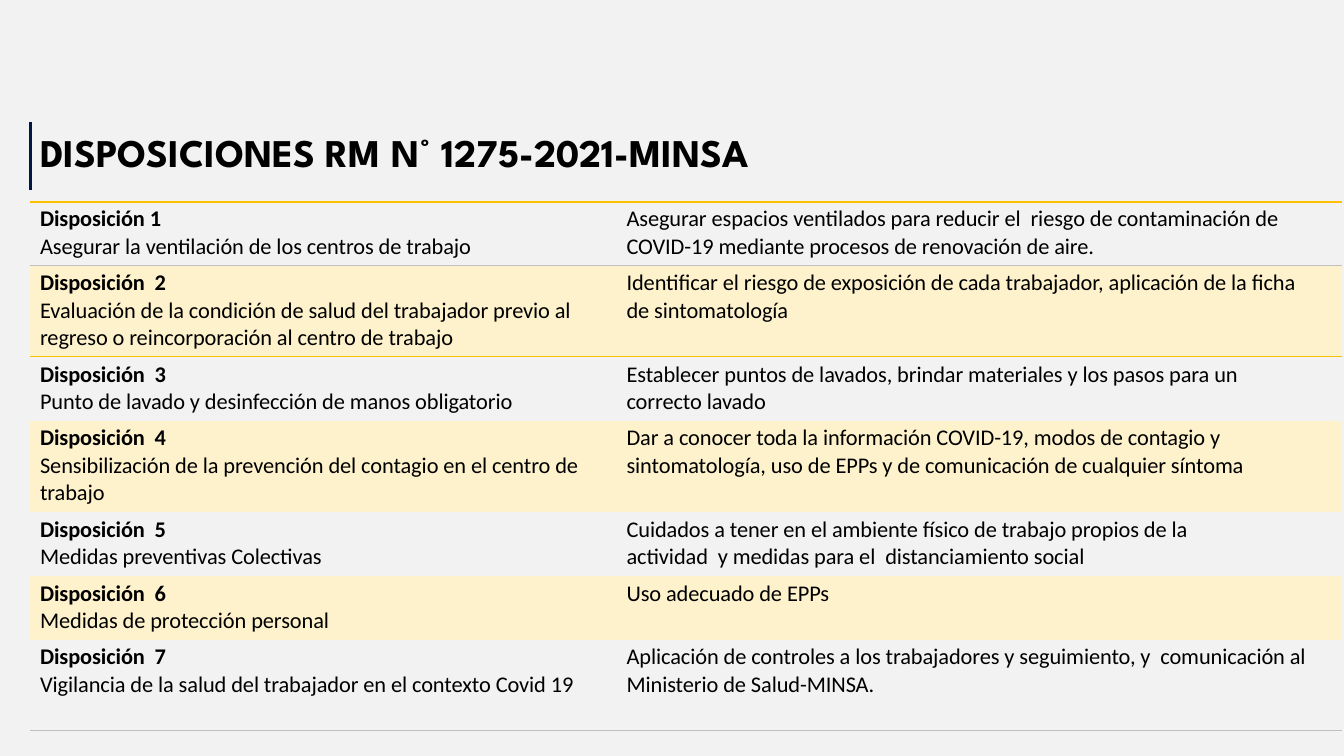
from dataclasses import dataclass

from lxml.etree import SubElement
from pptx import Presentation
from pptx.dml.color import RGBColor
from pptx.enum.shapes import MSO_CONNECTOR
from pptx.enum.text import MSO_ANCHOR, MSO_AUTO_SIZE, PP_ALIGN
from pptx.oxml.ns import qn
from pptx.util import Cm, Pt


@dataclass(frozen=True)
class Theme:
    title_font: str = "League Spartan"
    body_font: str = "Calibri"
    title_size: int = 28
    body_size: int = 16
    text: str = "000000"
    background: str = "F2F2F2"
    band: str = "FEF2CC"
    accent: str = "FFC000"
    rule: str = "BFBFBF"
    navy: str = "011643"


THEME = Theme()
TITLE = "DISPOSICIONES RM N° 1275-2021-MINSA"
COLUMN_WIDTHS = (14.5, 18.57)
TWO_LINES, THREE_LINES = 1.61, 2.3
NARROW = 2.0  # right margin of the cells with shorter lines

# heading, measure, detail paragraphs, row height, right margin of the detail
PROVISIONS = [
    ("Disposición 1", "Asegurar la ventilación de los centros de trabajo",
     ["Asegurar espacios ventilados para reducir el  riesgo de contaminación de "
      "COVID-19 mediante procesos de renovación de aire."], TWO_LINES, 0),
    ("Disposición  2", "Evaluación de la condición de salud del trabajador previo al "
     "regreso o reincorporación al centro de trabajo",
     ["Identificar el riesgo de exposición de cada trabajador, aplicación de la ficha",
      "de sintomatología"], THREE_LINES, 0),
    ("Disposición  3", "Punto de lavado y desinfección de manos obligatorio",
     ["Establecer puntos de lavados, brindar materiales y los pasos para un "
      "correcto lavado"], TWO_LINES, NARROW),
    ("Disposición  4", "Sensibilización de la prevención del contagio en el centro de trabajo",
     ["Dar a conocer toda la información COVID-19, modos de contagio y",
      "sintomatología, uso de EPPs y de comunicación de cualquier síntoma"], THREE_LINES, 0),
    ("Disposición  5", "Medidas preventivas Colectivas",
     ["Cuidados a tener en el ambiente físico de trabajo propios de la "
      "actividad  y medidas para el  distanciamiento social"], TWO_LINES, NARROW),
    ("Disposición  6", "Medidas de protección personal",
     ["Uso adecuado de EPPs"], TWO_LINES, 0),
    ("Disposición  7", "Vigilancia de la salud del trabajador en el contexto Covid 19",
     ["Aplicación de controles a los trabajadores y seguimiento, y  comunicación al "
      "Ministerio de Salud-MINSA."], THREE_LINES, 0),
]

# row: (edge, colour, width in points)
BORDERS = {
    0: [("T", THEME.accent, 1.5), ("B", THEME.rule, 0.75)],
    1: [("T", THEME.rule, 0.75), ("B", THEME.accent, 1)],
    2: [("T", THEME.accent, 1)],
    6: [("B", THEME.rule, 0.75)],
}


class SlideBuilder:
    def __init__(self, slide, theme):
        self.slide, self.theme = slide, theme
        fill = slide.background.fill
        fill.solid()
        fill.fore_color.rgb = RGBColor.from_string(theme.background)

    def add_run(self, paragraph, text, font_name, size, bold=False, spacing=0):
        """Add a run; spacing is in hundredths of a point."""
        run = paragraph.add_run()
        run.text = text
        font = run.font
        font.name, font.size, font.bold = font_name, Pt(size), bold
        font.color.rgb = RGBColor.from_string(self.theme.text)
        if spacing:
            font._element.set("spc", str(spacing))

    def set_title(self, text, left, top, width, height):
        title = self.slide.shapes.title
        title.left, title.top, title.width, title.height = map(Cm, (left, top, width, height))
        frame = title.text_frame
        frame.margin_left = frame.margin_right = frame.margin_bottom = 0
        frame.margin_top = Cm(0.04)
        frame.vertical_anchor = MSO_ANCHOR.MIDDLE
        frame.auto_size = MSO_AUTO_SIZE.SHAPE_TO_FIT_TEXT
        paragraph = frame.paragraphs[0]
        paragraph.alignment = PP_ALIGN.LEFT
        self.add_run(paragraph, text, self.theme.title_font, self.theme.title_size, True)

    def add_line(self, x1, y1, x2, y2, color, width):
        line = self.slide.shapes.add_connector(
            MSO_CONNECTOR.STRAIGHT, Cm(x1), Cm(y1), Cm(x2), Cm(y2))
        line.line.color.rgb = RGBColor.from_string(color)
        line.line.width = Pt(width)
        SubElement(line._element.spPr, qn("a:effectLst"))

    def set_borders(self, cell, borders):
        """Draw the listed edges and switch off the others."""
        styles = {edge: (color, width) for edge, color, width in borders}
        properties = cell._tc.get_or_add_tcPr()
        for position, edge in enumerate("LRTB"):
            line = properties.makeelement(qn(f"a:ln{edge}"))
            properties.insert(position, line)
            if edge not in styles:
                SubElement(line, qn("a:noFill"))
                continue
            color, width = styles[edge]
            line.set("w", str(Pt(width)))
            SubElement(SubElement(line, qn("a:solidFill")), qn("a:srgbClr"), val=color)

    def fill_cell(self, cell, paragraphs, left, right, banded, borders):
        """Write (text, bold) paragraphs and format the cell."""
        cell.margin_left, cell.margin_right = Cm(left), Cm(right)
        cell.margin_top, cell.margin_bottom = Cm(0.1), 0
        if banded:
            cell.fill.solid()
            cell.fill.fore_color.rgb = RGBColor.from_string(self.theme.band)
        else:
            cell.fill.background()
        self.set_borders(cell, borders)
        frame = cell.text_frame
        for index, (text, bold) in enumerate(paragraphs):
            paragraph = frame.add_paragraph() if index else frame.paragraphs[0]
            self.add_run(paragraph, text, self.theme.body_font, self.theme.body_size, bold, -5)

    def add_provisions(self, provisions, left, top):
        heights = [provision[3] for provision in provisions]
        table = self.slide.shapes.add_table(
            len(provisions), len(COLUMN_WIDTHS), Cm(left), Cm(top),
            Cm(sum(COLUMN_WIDTHS)), Cm(sum(heights))).table
        table.first_row = table.horz_banding = False
        for column, width in zip(table.columns, COLUMN_WIDTHS):
            column.width = Cm(width)
        for index, (heading, measure, details, height, right) in enumerate(provisions):
            table.rows[index].height = Cm(height)
            look = (index % 2 == 1, BORDERS.get(index, []))
            self.fill_cell(table.cell(index, 0), [(heading, True), (measure, False)],
                           0.25, 0, *look)
            self.fill_cell(table.cell(index, 1), [(text, False) for text in details],
                           0.53, right, *look)


def main():
    presentation = Presentation()
    presentation.slide_width, presentation.slide_height = Cm(33.87), Cm(19.05)
    slide = presentation.slides.add_slide(presentation.slide_layouts[5])
    builder = SlideBuilder(slide, THEME)
    builder.set_title(TITLE, 1.02, 3.18, 22.56, 1.27)
    builder.add_provisions(PROVISIONS, 0.76, 5.08)
    builder.add_line(0.76, 4.78, 0.76, 3.07, THEME.navy, 2.25)
    presentation.save("out.pptx")


if __name__ == "__main__":
    main()
